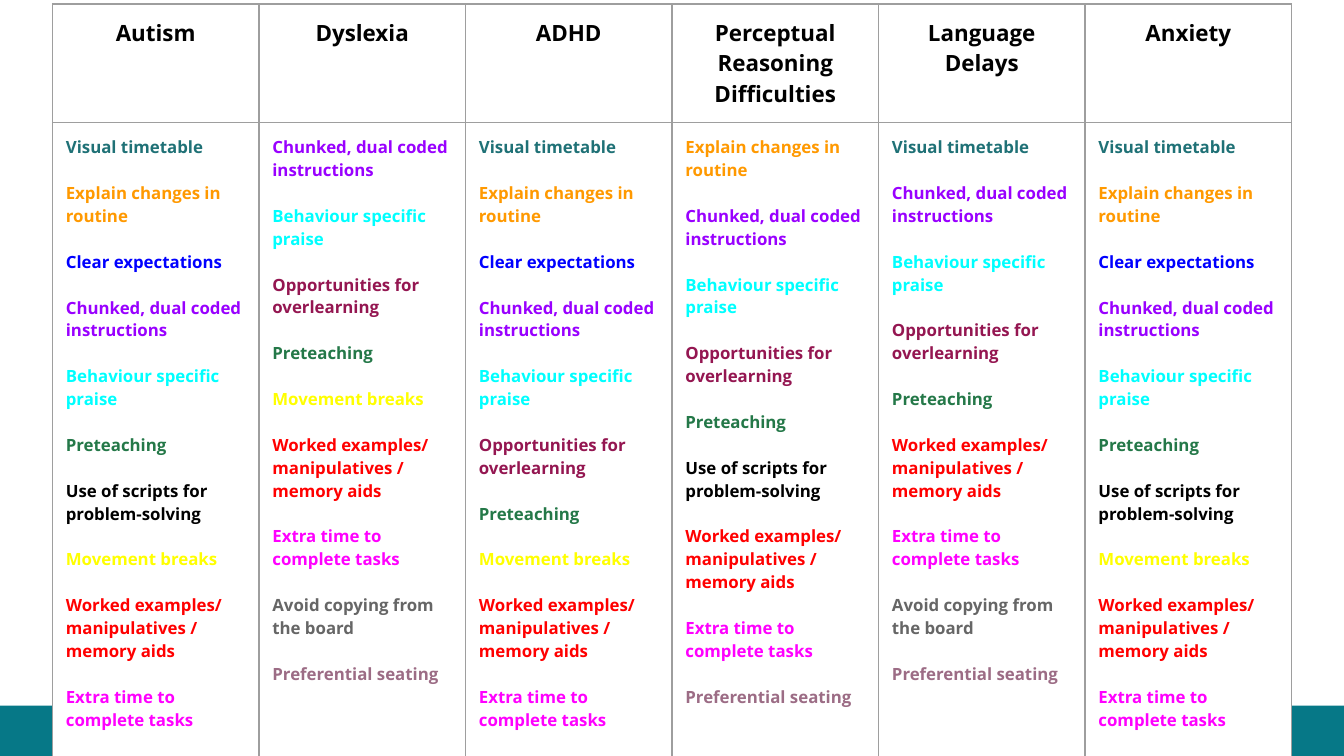
from lxml import etree
from pptx import Presentation
from pptx.dml.color import RGBColor
from pptx.enum import shapes, text
from pptx.oxml.ns import qn
from pptx.util import Inches, Pt


def rgb(value):
    return RGBColor.from_string(value)


def style(r, size, color):
    values = {"name": "Open Sans", "size": Pt(size), "bold": True}
    for name, value in values.items():
        setattr(r.font, name, value)
    r.font.color.rgb = rgb(color)


# Each strategy has one colour wherever it appears
strategies = {
    "V": ("Visual timetable", "1F7176"),
    "R": ("Explain changes in routine", "FF9900"),
    "C": ("Clear expectations", "0000FF"),
    "I": ("Chunked, dual coded instructions", "9900FF"),
    "B": ("Behaviour specific praise", "00FFFF"),
    "O": ("Opportunities for overlearning", "941651"),
    "P": ("Preteaching", "247848"),
    "S": ("Use of scripts for problem-solving", "000000"),
    "M": ("Movement breaks", "FFFF00"),
    "W": ("Worked examples/ manipulatives / memory aids", "FF0000"),
    "T": ("Extra time to complete tasks", "FF00FF"),
    "A": ("Avoid copying from the board", "666666"),
    "F": ("Preferential seating", "9C6C85"),
}
needs = {
    "Autism": "VRCIBPSMWTF",
    "Dyslexia": "IBOPMWTAF",
    "ADHD": "VRCIBOPMWTF",
    "Perceptual Reasoning Difficulties": "RIBOPSWTF",
    "Language Delays": "VIBOPWTAF",
    "Anxiety": "VRCIBPSMWTF",
}

# 16:9 slide
prs = Presentation()
prs.slide_width = Inches(10)
prs.slide_height = prs.slide_width * 9 // 16
s = prs.slides.add_slide(prs.slide_layouts[6])

# Footer band
sp = s.shapes.add_shape(shapes.MSO_SHAPE.RECTANGLE, 0, Inches(5.25),
                        Inches(10), Inches(0.39))
sp.shadow.inherit = False
sp.fill.solid()
sp.fill.fore_color.rgb = rgb("067887")
sp.line.fill.background()

# Table grid
width = Inches(9.22)
table = s.shapes.add_table(2, len(needs), Inches(0.39), Inches(0.03),
                           width, Inches(5.2)).table
table.first_row = table.horz_banding = False
table.rows[0].height, table.rows[1].height = Inches(0.79), Inches(4.35)
for col in table.columns:
    col.width = width // len(needs)

# Cell margins, borders and fill
for cell in table.iter_cells():
    for side in ("left", "right", "top", "bottom"):
        setattr(cell, f"margin_{side}", Inches(0.1))
    tcPr = cell._tc.get_or_add_tcPr()
    for tag in ("a:lnL", "a:lnR", "a:lnT", "a:lnB"):
        ln = etree.SubElement(tcPr, qn(tag), w=str(Pt(0.75)))
        fill = etree.SubElement(ln, qn("a:solidFill"))
        etree.SubElement(fill, qn("a:srgbClr"), val="9E9E9E")
    cell.fill.solid()
    cell.fill.fore_color.rgb = rgb("FFFFFF")

# Headings and strategies
for c, (need, keys) in enumerate(needs.items()):
    p = table.cell(0, c).text_frame.paragraphs[0]
    p.alignment = text.PP_ALIGN.CENTER
    r = p.add_run()
    r.text = need
    style(r, 12, "000000")

    tf = table.cell(1, c).text_frame
    for i, key in enumerate(keys):
        label, color = strategies[key]
        p = tf.add_paragraph() if i else tf.paragraphs[0]
        if i:
            p.space_before = Pt(12.3)
        r = p.add_run()
        r.text = label
        style(r, 9, color)

prs.save("out.pptx")
